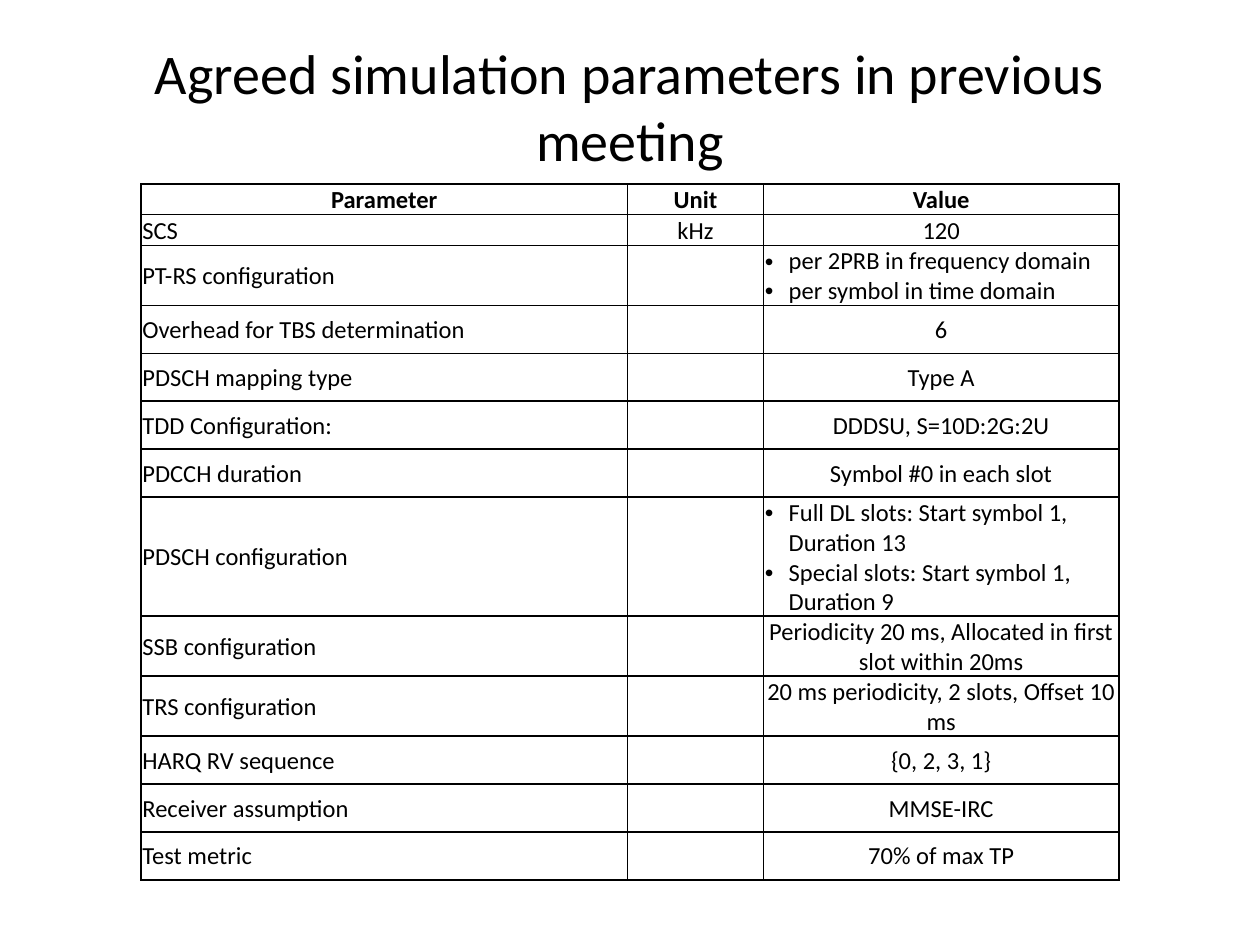
"""Build a slide with the table of agreed simulation parameters."""
from lxml import etree
from pptx import Presentation
from pptx.dml.color import RGBColor
from pptx.enum.text import MSO_ANCHOR, PP_ALIGN
from pptx.oxml.ns import qn
from pptx.util import Inches, Pt

BLACK = RGBColor(0x00, 0x00, 0x00)
WHITE = RGBColor(0xFF, 0xFF, 0xFF)
LEFT, CENTER = PP_ALIGN.LEFT, PP_ALIGN.CENTER
MIDDLE = MSO_ANCHOR.MIDDLE
FONT = "Calibri"

COLUMN_WIDTHS = [3.86, 1.08, 2.82]
ROWS = [
    (0.24, "Parameter", "Unit", ["Value"]),
    (0.24, "SCS", "kHz", ["120"]),
    (0.47, "PT-RS configuration", "",
     ["per 2PRB in frequency domain", "per symbol in time domain"]),
    (0.38, "Overhead for TBS determination", "", ["6"]),
    (0.38, "PDSCH mapping type", "", ["Type A"]),
    (0.38, "TDD Configuration:", "", ["DDDSU, S=10D:2G:2U"]),
    (0.38, "PDCCH duration", "", ["Symbol #0 in each slot"]),
    (0.65, "PDSCH configuration", "",
     ["Full DL slots: Start symbol 1, Duration 13",
      "Special slots: Start symbol 1, Duration 9"]),
    (0.38, "SSB configuration", "",
     ["Periodicity 20 ms, Allocated in first slot within 20ms"]),
    (0.38, "TRS configuration", "", ["20 ms periodicity, 2 slots, Offset 10 ms"]),
    (0.38, "HARQ RV sequence", "", ["{0, 2, 3, 1}"]),
    (0.38, "Receiver assumption", "", ["MMSE-IRC"]),
    (0.38, "Test metric", "", ["70% of max TP"]),
]


def write_text(frame, lines, size=14, bold=False, align=CENTER, bullets=False):
    for index, line in enumerate(lines):
        para = frame.paragraphs[0] if index == 0 else frame.add_paragraph()
        para.alignment = align
        para.font.size = Pt(size)
        if bullets:
            properties = para._p.get_or_add_pPr()
            properties.set("marL", str(Inches(0.19)))
            properties.set("indent", str(Inches(-0.19)))
            bullet_font = etree.Element(qn("a:buFont"), typeface="Arial")
            bullet = etree.Element(qn("a:buChar"), char="•")
            properties.insert(0, bullet_font)
            properties.insert(1, bullet)
        if line:
            span = para.add_run()
            span.text = line
            span.font.name = FONT
            span.font.size = Pt(size)
            span.font.bold = bold
            span.font.color.rgb = BLACK


def style_cell(cell):
    cell.margin_left = cell.margin_top = cell.margin_right = Inches(0.01)
    cell.margin_bottom = 0
    cell.vertical_anchor = MIDDLE
    properties = cell._tc.get_or_add_tcPr()
    for side in ("lnL", "lnR", "lnT", "lnB"):
        border = etree.SubElement(properties, qn(f"a:{side}"), w=str(Pt(1)))
        fill = etree.SubElement(border, qn("a:solidFill"))
        etree.SubElement(fill, qn("a:srgbClr"), val=str(BLACK))
    cell.fill.solid()
    cell.fill.fore_color.rgb = WHITE


deck = Presentation()
deck.slide_width, deck.slide_height = Inches(10), Inches(7.5)
page = deck.slides.add_slide(deck.slide_layouts[6])

title = page.shapes.add_textbox(Inches(0.5), Inches(0.21), Inches(9), Inches(1.25))
title.text_frame.word_wrap = True
title.text_frame.vertical_anchor = MIDDLE
write_text(title.text_frame, ["Agreed simulation parameters in previous meeting"], size=32)

table = page.shapes.add_table(
    len(ROWS), len(COLUMN_WIDTHS), Inches(1.12), Inches(1.46),
    Inches(sum(COLUMN_WIDTHS)), Inches(sum(row[0] for row in ROWS))).table
table.first_row = table.horz_banding = False
for column, width in zip(table.columns, COLUMN_WIDTHS):
    column.width = Inches(width)

for row_index, (height, parameter, unit, values) in enumerate(ROWS):
    table.rows[row_index].height = Inches(height)
    header = row_index == 0
    for column_index, lines in enumerate(([parameter], [unit], values)):
        cell = table.cell(row_index, column_index)
        style_cell(cell)
        bullets = len(lines) > 1
        align = LEFT if bullets or (column_index == 0 and not header) else CENTER
        write_text(cell.text_frame, lines, bold=header, align=align, bullets=bullets)

deck.save("out.pptx")
